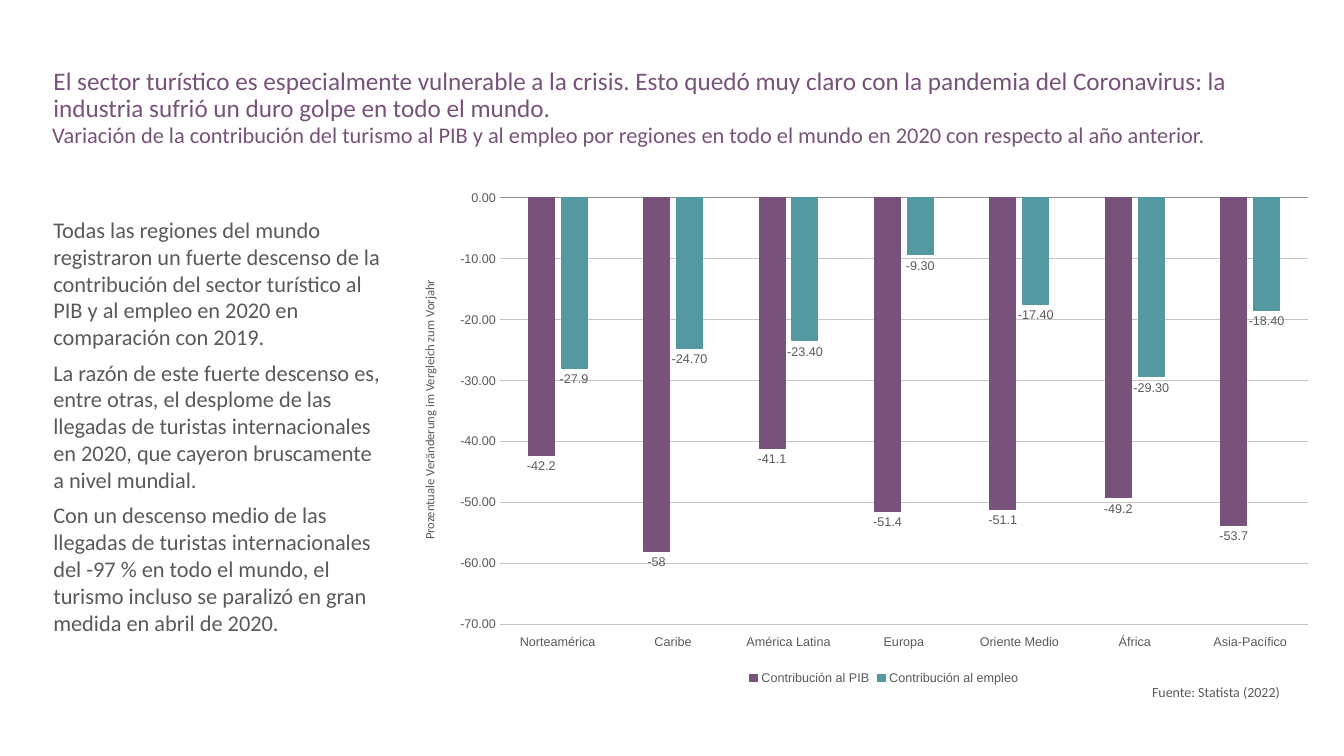
from lxml import etree
from pptx import Presentation
from pptx import util as u
from pptx.chart.data import CategoryChartData
from pptx.dml.color import RGBColor
from pptx.enum import chart as charts, text
from pptx.oxml.ns import qn

PURPLE, TEAL, GREY = "79527B", "5499A2", "595A59"
AXIS_LINE, GRID_LINE = "8E8E8E", "C5C5C5"
WIDTH, HEIGHT = u.Inches(13.333), u.Inches(7.5)

HEADLINE = ("El sector turístico es especialmente vulnerable a la crisis. Esto quedó muy claro "
            "con la pandemia del Coronavirus: la industria sufrió un duro golpe en todo el mundo.")
SUBTITLE = ("Variación de la contribución del turismo al PIB y al empleo por regiones "
            "en todo el mundo en 2020 con respecto al año anterior.")
COMMENTARY = [
    "Todas las regiones del mundo registraron un fuerte descenso de la contribución "
    "del sector turístico al PIB y al empleo en 2020 en comparación con 2019.",
    "La razón de este fuerte descenso es, entre otras, el desplome de las llegadas de "
    "turistas internacionales en 2020, que cayeron bruscamente a nivel mundial.",
    "Con un descenso medio de las llegadas de turistas internacionales del -97 % en todo "
    "el mundo, el turismo incluso se paralizó en gran medida en abril de 2020.",
]
REGIONS = ["Norteamérica", "Caribe", "América Latina", "Europa",
           "Oriente Medio", "África", "Asia-Pacífico"]
SERIES = [
    ("Contribución al PIB", PURPLE, "General", [-42.2, -58, -41.1, -51.4, -51.1, -49.2, -53.7]),
    ("Contribución al empleo", TEAL, "#,##0.00", [-27.9, -24.7, -23.4, -9.3, -17.4, -29.3, -18.4]),
]


def colour(value):
    """Turn a hex string into a colour."""
    return RGBColor.from_string(value)


def area(left, top, width, height):
    """Turn percentages of the slide into a position and a size."""
    return [int(share * side / 100) for share, side in
            zip((left, top, width, height), (WIDTH, HEIGHT, WIDTH, HEIGHT))]


def set_font(font, size, value, name="Arial"):
    """Set the size, colour and typeface of a font."""
    font.size, font.name, font.bold = u.Pt(size), name, False
    font.color.rgb = colour(value)


def set_line(line, value):
    """Give a line its colour and the common thin width."""
    line.color.rgb = colour(value)
    line.width = u.Pt(0.75)


def write(box, lines, size, value, spacing=1.0, anchor=text.MSO_ANCHOR.TOP):
    """Fill a box with paragraphs in one style."""
    frame = box.text_frame
    frame.text = "\n".join(lines)
    frame.word_wrap = True
    frame.auto_size = text.MSO_AUTO_SIZE.NONE
    frame.vertical_anchor = anchor
    for index, para in enumerate(frame.paragraphs):
        para.alignment = text.PP_ALIGN.LEFT
        para.line_spacing = spacing
        para.space_before = u.Pt(6 if index else 0)
        set_font(para.font, size, value, "Calibri")


def add_text(page, place, lines, size, value, **style):
    """Add a text box at a place given in percentages."""
    box = page.shapes.add_textbox(*area(*place))
    write(box, lines, size, value, **style)
    return box


def add_title(page, place, line, size, value, **style):
    """Move the title placeholder and fill it."""
    title = page.shapes.title
    title.left, title.top, title.width, title.height = area(*place)
    write(title, [line], size, value, **style)


def style_axis(axis):
    """Set what both axes share."""
    axis.major_tick_mark = axis.minor_tick_mark = charts.XL_TICK_MARK.NONE
    set_font(axis.tick_labels.font, 9, GREY)


def format_point_label(series, index, number_format):
    """Give one data label its own number format."""
    set_font(series.points[index].data_label.font, 9, GREY)
    label = series.data_labels._element.find(qn("c:dLbl"))
    number = etree.Element(qn("c:numFmt"), formatCode=number_format, sourceLinked="0")
    label.insert(1, number)


def style_series(series, value, number_format):
    """Colour the columns of a series and label them."""
    series.invert_if_negative = False
    series.format.fill.solid()
    series.format.fill.fore_color.rgb = colour(value)
    set_line(series.format.line, value)
    labels = series.data_labels
    labels.show_value = True
    labels.number_format, labels.number_format_is_linked = number_format, False
    labels.position = charts.XL_LABEL_POSITION.OUTSIDE_END
    set_font(labels.font, 9, GREY)


def add_columns(page, place):
    """Add the clustered column chart of both contributions."""
    data = CategoryChartData()
    data.categories = REGIONS
    for name, _, _, values in SERIES:
        data.add_series(name, values)
    chart = page.shapes.add_chart(charts.XL_CHART_TYPE.COLUMN_CLUSTERED, *area(*place), data).chart
    set_font(chart.font, 10, GREY)
    chart.has_title = False
    chart.has_legend = True
    chart.legend.position = charts.XL_LEGEND_POSITION.BOTTOM
    chart.legend.include_in_layout = False
    set_font(chart.legend.font, 9, GREY)

    plot = chart.plots[0]
    plot.vary_by_categories = False
    plot.gap_width, plot.overlap = 219, -27
    for series, (_, value, number_format, _) in zip(plot.series, SERIES):
        style_series(series, value, number_format)
    format_point_label(plot.series[1], 0, "General")

    regions, change = chart.category_axis, chart.value_axis
    style_axis(regions)
    regions.tick_label_position = charts.XL_TICK_LABEL_POSITION.LOW
    set_line(regions.format.line, AXIS_LINE)
    style_axis(change)
    change.minimum_scale, change.maximum_scale, change.major_unit = -70, 0, 10
    change.tick_labels.number_format = "#,##0.00"
    change.tick_labels.number_format_is_linked = False
    change.format.line.fill.background()
    set_line(change.major_gridlines.format.line, GRID_LINE)


def main():
    """Build the slide and save it."""
    deck = Presentation()
    deck.slide_width, deck.slide_height = WIDTH, HEIGHT
    page = deck.slides.add_slide(deck.slide_layouts.get_by_name("Title Only"))
    add_title(page, (3.23, 8.4, 94.05, 8.53), HEADLINE, 18, PURPLE, spacing=0.9)
    add_text(page, (3.15, 15.73, 94.2, 3.73), [SUBTITLE], 16, PURPLE, spacing=0.9)
    add_text(page, (3.23, 23.87, 26.18, 64.93), COMMENTARY, 16, GREY,
             anchor=text.MSO_ANCHOR.MIDDLE)
    add_columns(page, (32.93, 23.87, 65.7, 67.33))
    add_text(page, (84.98, 89.73, 16.88, 3.6), ["Fuente: Statista (2022)"], 10, GREY)
    axis_title = add_text(page, (19.13, 48.27, 25.65, 3.33),
                          ["Prozentuale Veränderung im Vergleich zum Vorjahr"], 9, GREY)
    axis_title.rotation = 270
    deck.save("out.pptx")


if __name__ == "__main__":
    main()
